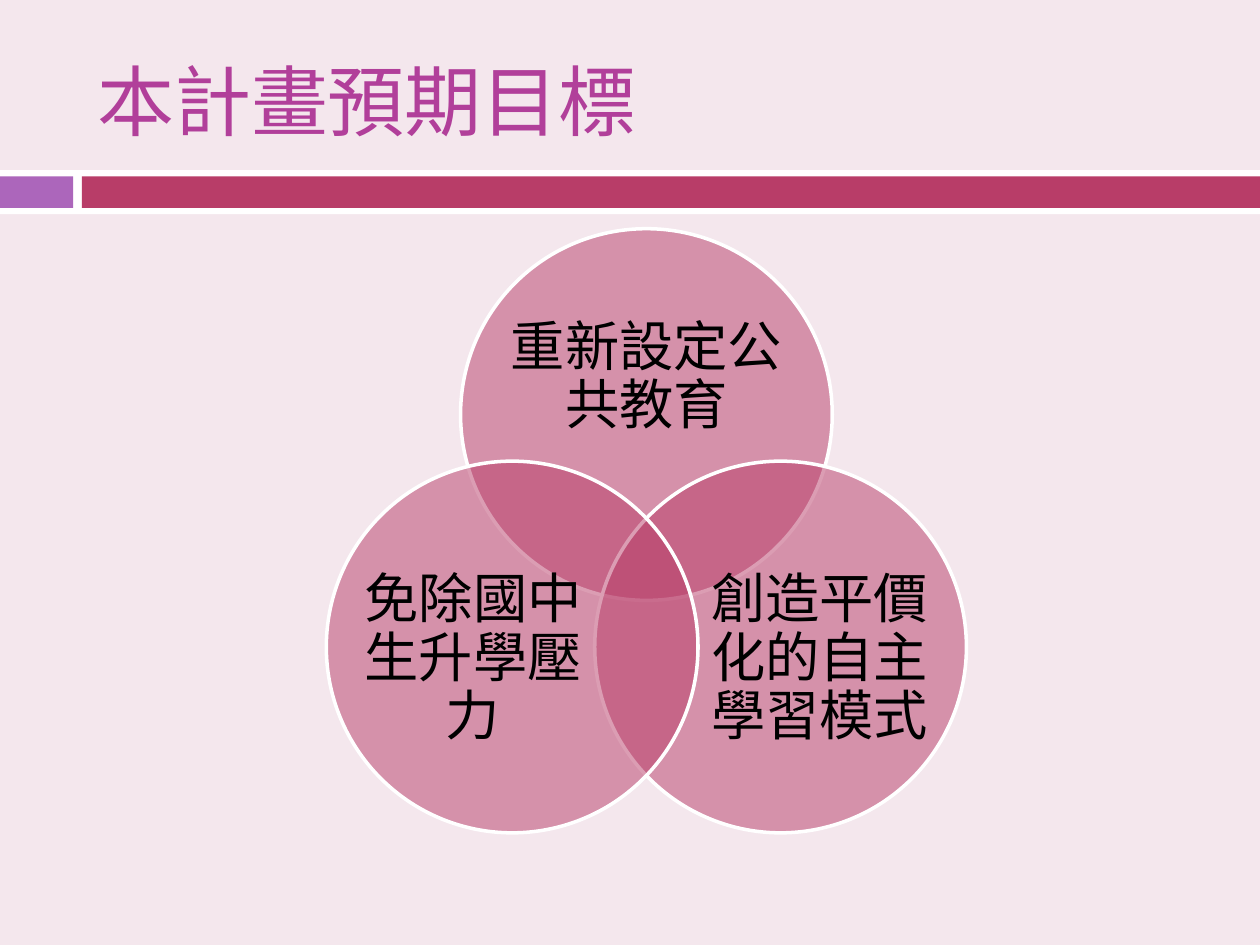
from math import cos, radians, sin

from lxml.etree import SubElement
from pptx import Presentation
from pptx.dml.color import RGBColor
from pptx.enum.shapes import MSO_SHAPE
from pptx.enum.text import MSO_ANCHOR, PP_ALIGN
from pptx.oxml.ns import qn
from pptx.util import Inches, Pt

BACKGROUND = RGBColor(0xF4, 0xE7, 0xED)
WHITE = RGBColor(0xFF, 0xFF, 0xFF)
BLACK = RGBColor(0x00, 0x00, 0x00)
PURPLE = RGBColor(0xAC, 0x66, 0xBB)
CRIMSON = RGBColor(0xB8, 0x3D, 0x68)
MAGENTA = RGBColor(0xB1, 0x3F, 0x9A)
FONT = "TeX Gyre Pagella"

WIDTH, HEIGHT = 10, 7.5
# Venn diagram: three circles on an orbit around a common centre
CENTER_X, CENTER_Y = 5.13, 4.52
ORBIT, DIAMETER = 1.23, 2.95
# Goal, angle on the orbit, label shift from the circle's centre, label size
GOALS = [
    ("重新設定公共教育", -90, (0, -0.29), (2.16, 1.33)),
    ("創造平價化的自主學習模式", 30, (0.31, 0.1), (1.77, 1.62)),
    ("免除國中生升學壓力", 150, (-0.31, 0.1), (1.77, 1.62)),
]


def set_all(target, values):
    for key, value in values.items():
        setattr(target, key, value)


def centered_box(x, y, width, height):
    return [Inches(v) for v in (x - width / 2, y - height / 2, width, height)]


def style_text(frame, text, size, color, align, **paragraph_format):
    frame.text = text
    set_all(frame, {"word_wrap": True, "vertical_anchor": MSO_ANCHOR.MIDDLE})
    paragraph = frame.paragraphs[0]
    set_all(paragraph, {"alignment": align, **paragraph_format})
    set_all(paragraph.font, {"name": FONT, "size": Pt(size)})
    paragraph.font.color.rgb = color


def add_band(slide, left, top, width, height, color):
    band = slide.shapes.add_shape(
        MSO_SHAPE.RECTANGLE, *[Inches(v) for v in (left, top, width, height)])
    band.shadow.inherit = False
    band.fill.solid()
    band.fill.fore_color.rgb = color
    band.line.fill.background()


def add_circle(slide, x, y):
    circle = slide.shapes.add_shape(
        MSO_SHAPE.OVAL, *centered_box(x, y, DIAMETER, DIAMETER))
    circle.shadow.inherit = False
    circle.fill.solid()
    circle.fill.fore_color.rgb = CRIMSON
    # Half transparent, so that the overlaps show
    color = circle.fill._xPr.find(qn("a:solidFill"))[0]
    SubElement(color, qn("a:alpha"), val="50000")
    circle.line.color.rgb = WHITE
    circle.line.width = Pt(2)


def add_label(slide, text, x, y, size):
    frame = slide.shapes.add_textbox(*centered_box(x, y, *size)).text_frame
    set_all(frame, dict.fromkeys(
        ("margin_left", "margin_top", "margin_right", "margin_bottom"), 0))
    style_text(frame, text, 31, BLACK, PP_ALIGN.CENTER, line_spacing=0.9)


def add_title(slide, text):
    title = slide.shapes.title
    set_all(title, {"left": Inches(0.67), "top": Inches(0.25),
                    "width": Inches(8.92), "height": Inches(1.08)})
    style_text(title.text_frame, text, 44, MAGENTA, PP_ALIGN.LEFT)


def main():
    deck = Presentation()
    set_all(deck, {"slide_width": Inches(WIDTH), "slide_height": Inches(HEIGHT)})
    slide = deck.slides.add_slide(deck.slide_layouts[5])
    slide.background.fill.solid()
    slide.background.fill.fore_color.rgb = BACKGROUND

    # Title and divider
    add_title(slide, "本計畫預期目標")
    add_band(slide, 0, 1.35, WIDTH, 0.35, WHITE)
    add_band(slide, 0, 1.4, 0.58, 0.25, PURPLE)
    add_band(slide, 0.65, 1.4, WIDTH - 0.65, 0.25, CRIMSON)

    # Overlapping goals
    for goal, angle, (shift_x, shift_y), label_size in GOALS:
        x = CENTER_X + ORBIT * cos(radians(angle))
        y = CENTER_Y + ORBIT * sin(radians(angle))
        add_circle(slide, x, y)
        add_label(slide, goal, x + shift_x, y + shift_y, label_size)

    deck.save("out.pptx")


if __name__ == "__main__":
    main()
